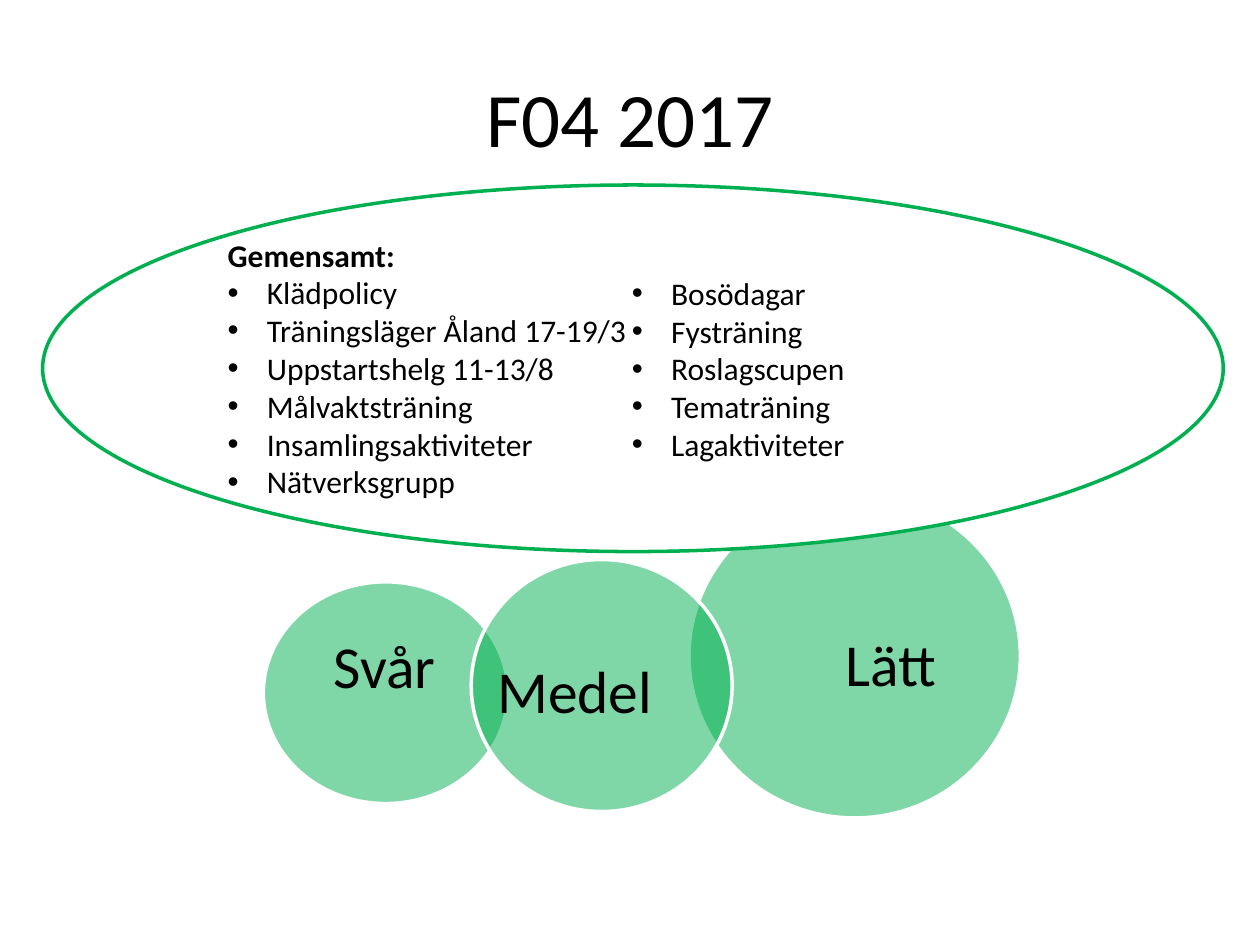
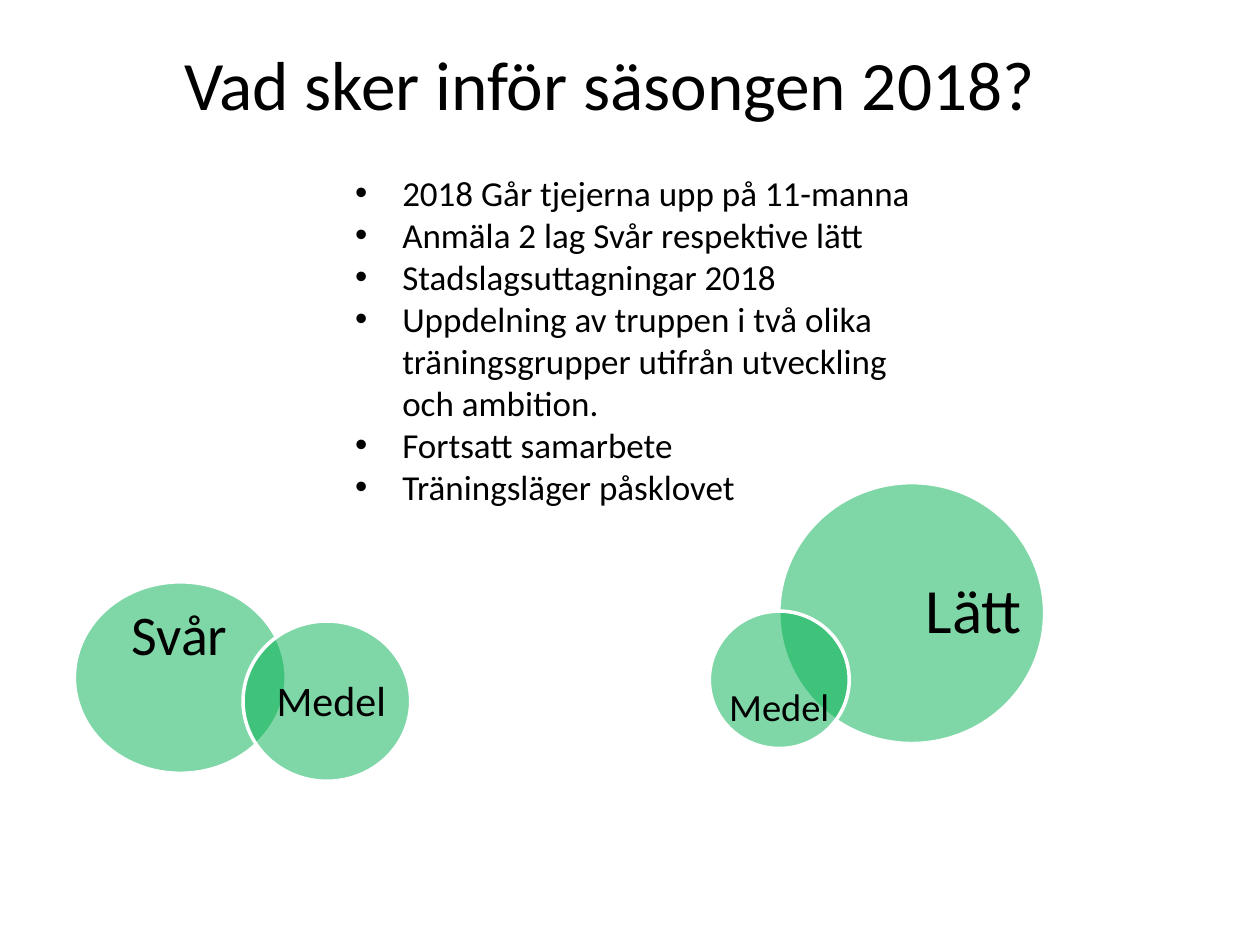
from dataclasses import dataclass

from lxml import etree
from pptx import Presentation
from pptx.dml.color import RGBColor
from pptx.enum.shapes import MSO_SHAPE
from pptx.enum.text import MSO_ANCHOR, PP_ALIGN
from pptx.oxml.ns import qn
from pptx.util import Cm, Pt

OVAL = MSO_SHAPE.OVAL
TOP, MIDDLE = MSO_ANCHOR.TOP, MSO_ANCHOR.MIDDLE
LEFT, CENTER = PP_ALIGN.LEFT, PP_ALIGN.CENTER
BLANK_LAYOUT = 6


@dataclass(frozen=True)
class Theme:
    """Colours, font and sizes shared by the slides."""

    font: str = "Calibri"
    text: RGBColor = RGBColor(0, 0, 0)
    paper: RGBColor = RGBColor(255, 255, 255)
    green: RGBColor = RGBColor(0, 176, 80)
    opacity: int = 50
    outline: float = 2
    title: float = 44
    long_title: float = 39.6
    shared_list: float = 18
    plan_list: float = 20


@dataclass(frozen=True)
class Bubble:
    """A level circle, with its label box relative to the circle."""

    name: str
    size: float
    circle: tuple
    label: tuple


THEME = Theme()

SHARED_LEFT = ["Klädpolicy", "Träningsläger Åland 17-19/3", "Uppstartshelg 11-13/8",
               "Målvaktsträning", "Insamlingsaktiviteter", "Nätverksgrupp"]
SHARED_RIGHT = ["Bosödagar", "Fysträning", "Roslagscupen", "Tematräning", "Lagaktiviteter"]
PLANS = ["2018 Går tjejerna upp på 11-manna", "Anmäla 2 lag Svår respektive lätt",
         "Stadslagsuttagningar 2018",
         "Uppdelning av truppen i två olika träningsgrupper utifrån utveckling och ambition.",
         "Fortsatt samarbete", "Träningsläger påsklovet"]

LEVELS_2017 = [
    Bubble("Svår", 34, (0, 1.77, 4.93, 4.47), (0.64, 0.76, 3.61, 2.01)),
    Bubble("Lätt", 34, (8.58, 0, 6.68, 6.53), (2.06, 1.7, 4.01, 3.58)),
    Bubble("Medel", 34, (4.19, 1.32, 5.26, 5.08), (0.51, 1.32, 3.15, 2.79)),
]
HARD_GROUP_2018 = [
    Bubble("Svår", 32, (0, 0, 4.27, 3.86), (0.48, 0.51, 3.28, 1.22)),
    Bubble("Medel", 24, (3.4, 0.79, 3.38, 3.23), (0.51, 1.14, 2.54, 1.02)),
]
EASY_GROUP_2018 = [
    Bubble("Lätt", 36, (1.4, 0, 5.36, 5.26), (2.9, 0.61, 2.06, 4.04)),
    Bubble("Medel", 22, (0, 2.59, 2.82, 2.77), (0.33, 1.52, 2.16, 0.89)),
]


def offset(box, left, top):
    """Move a box by the given origin."""
    return (box[0] + left, box[1] + top, *box[2:])


def add_text(slide, box, lines, size, alignment=LEFT, anchor=TOP, spacing=1.0):
    """Place lines in a text box without margins and return its paragraphs."""
    frame = slide.shapes.add_textbox(*map(Cm, box)).text_frame
    frame.word_wrap = True
    frame.vertical_anchor = anchor
    frame.margin_left = frame.margin_right = frame.margin_top = frame.margin_bottom = 0
    frame.text = "\n".join(lines)
    for paragraph in frame.paragraphs:
        paragraph.alignment = alignment
        paragraph.line_spacing = spacing
        paragraph.font.name = THEME.font
        paragraph.font.size = Pt(size)
        paragraph.font.color.rgb = THEME.text
    return frame.paragraphs


def add_bullets(paragraphs, indent):
    """Give paragraphs a bullet with a hanging indent."""
    for paragraph in paragraphs:
        properties = paragraph._p.get_or_add_pPr()
        properties.set("marL", str(Cm(indent)))
        properties.set("indent", str(-Cm(indent)))
        etree.SubElement(properties, qn("a:buFont"), typeface="Arial")
        etree.SubElement(properties, qn("a:buChar"), char="•")
        for default in properties.findall(qn("a:defRPr")):
            properties.append(default)


def add_title(slide, box, title, size):
    """Place a centred slide title."""
    add_text(slide, box, [title], size, CENTER, MIDDLE)


def add_oval(slide, box, fill, line):
    """Draw an outlined oval."""
    oval = slide.shapes.add_shape(OVAL, *map(Cm, box))
    oval.shadow.inherit = False
    oval.fill.solid()
    oval.fill.fore_color.rgb = fill
    oval.line.color.rgb = line
    oval.line.width = Pt(THEME.outline)
    return oval


def add_bubbles(slide, left, top, bubbles):
    """Draw overlapping translucent circles with labels."""
    for bubble in bubbles:
        circle = offset(bubble.circle, left, top)
        oval = add_oval(slide, circle, THEME.green, THEME.paper)
        color = oval._element.spPr.find(qn("a:solidFill")).find(qn("a:srgbClr"))
        etree.SubElement(color, qn("a:alpha"), val=str(THEME.opacity * 1000))
        add_text(slide, offset(bubble.label, *circle[:2]), [bubble.name],
                 bubble.size, CENTER, MIDDLE, 0.9)


def add_shared_activities(slide, box):
    """Draw the wide oval with its heading and two bulleted columns."""
    add_oval(slide, box, THEME.paper, THEME.green)
    left_column = offset((3.73, 1.02, 8.13, 5.4), *box[:2])
    right_column = offset((11.88, 1.79, 8.13, 3.9), *box[:2])
    heading, *items = add_text(slide, left_column, ["Gemensamt:", *SHARED_LEFT],
                               THEME.shared_list)
    heading.font.bold = True
    add_bullets(items, 0.79)
    add_bullets(add_text(slide, right_column, SHARED_RIGHT, THEME.shared_list), 0.79)


def build_season_2017(slide):
    """Show the levels and what they share."""
    add_title(slide, (1.27, 0.76, 22.86, 3.18), "F04 2017", THEME.title)
    add_bubbles(slide, 5.31, 9.96, LEVELS_2017)
    add_shared_activities(slide, (0.86, 3.73, 23.8, 7.39))


def build_season_2018(slide):
    """Show the plans and the two new training groups."""
    add_title(slide, (0.86, 0.08, 22.86, 3.18), "Vad sker inför säsongen 2018?",
              THEME.long_title)
    add_bubbles(slide, 1.5, 11.73, HARD_GROUP_2018)
    add_bubbles(slide, 14.3, 9.73, EASY_GROUP_2018)
    add_bullets(add_text(slide, (7.16, 3.46, 11.89, 6.8), PLANS, THEME.plan_list), 0.95)


def main():
    """Build and save the presentation."""
    presentation = Presentation()
    presentation.slide_width, presentation.slide_height = Cm(25.4), Cm(19.05)
    for build in (build_season_2017, build_season_2018):
        build(presentation.slides.add_slide(presentation.slide_layouts[BLANK_LAYOUT]))
    presentation.save("out.pptx")


if __name__ == "__main__":
    main()
